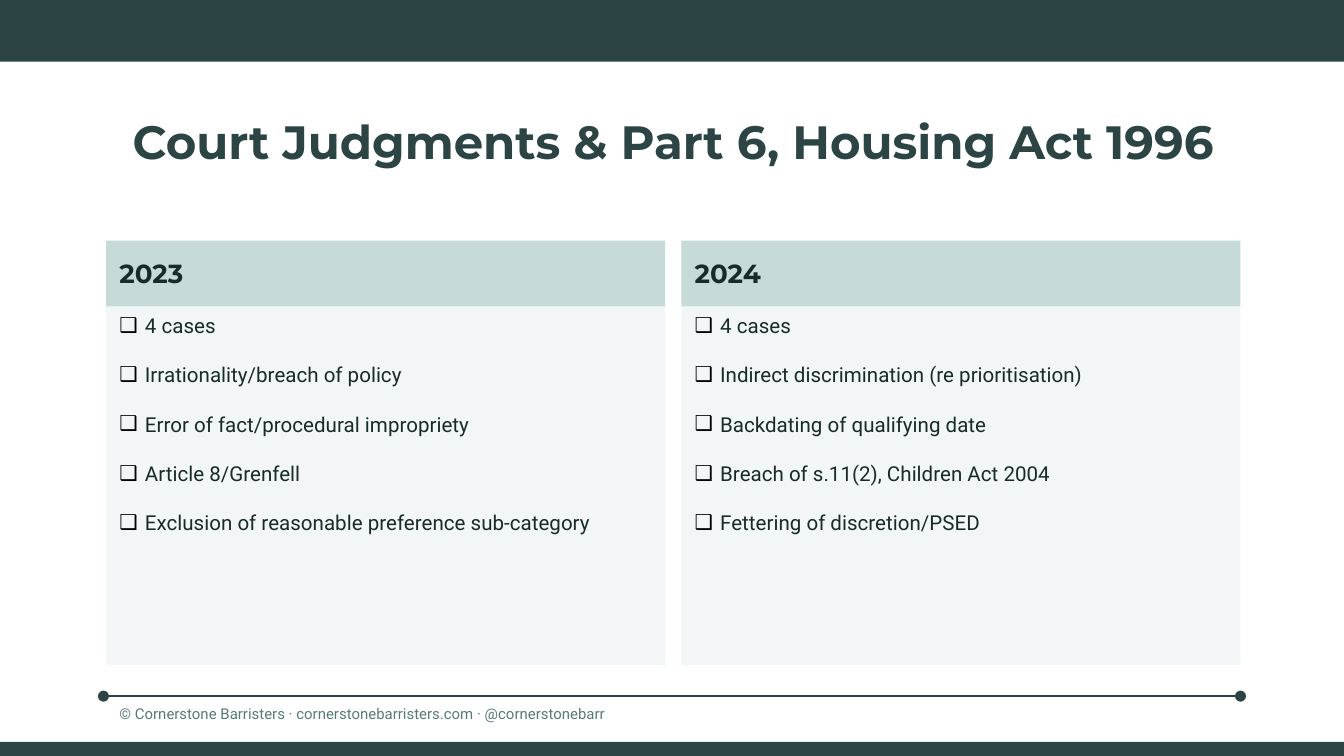
from pptx import Presentation
from pptx.dml.color import RGBColor
from pptx.enum.shapes import MSO_CONNECTOR, MSO_SHAPE
from pptx.enum.text import MSO_ANCHOR, PP_ALIGN
from pptx.oxml import parse_xml
from pptx.oxml.ns import nsdecls
from pptx.util import Inches, Pt

DARK = RGBColor(0x2C, 0x44, 0x44)
INK = RGBColor(0x18, 0x2B, 0x2A)
TEAL = RGBColor(0x56, 0x7A, 0x78)
HEADER = RGBColor(0xC6, 0xDA, 0xDA)
PANEL = RGBColor(0xF2, 0xF6, 0xF6)

TITLE_FMT = {"name": "Montserrat", "size": Pt(25), "bold": True}
HEAD_FMT = {"name": "Montserrat", "size": Pt(14), "bold": True}
BODY_FMT = {"name": "Roboto", "size": Pt(11)}
FOOT_FMT = {"name": "Roboto", "size": Pt(8)}

LEFT, GAP, COL_W = 0.79, 0.12, 4.16
HEAD_TOP, HEAD_H, BODY_H = 1.79, 0.49, 2.67

COLUMNS = {
    "2023": [
        "4 cases",
        "Irrationality/breach of policy",
        "Error of fact/procedural impropriety",
        "Article 8/Grenfell",
        "Exclusion of reasonable preference sub-category",
    ],
    "2024": [
        "4 cases",
        "Indirect discrimination (re prioritisation)",
        "Backdating of qualifying date",
        "Breach of s.11(2), Children Act 2004",
        "Fettering of discretion/PSED",
    ],
}

# 16:9 slide
prs = Presentation()
prs.slide_width, prs.slide_height = Inches(10), Inches(10 * 9 / 16)
s = prs.slides.add_slide(prs.slide_layouts[6])


def add_box(x, y, w, h, fill=None):
    """Add a filled rectangle, or a text box when there is no fill."""
    box = [Inches(v) for v in (x, y, w, h)]
    if fill is None:
        sp = s.shapes.add_textbox(*box)
    else:
        sp = s.shapes.add_shape(MSO_SHAPE.RECTANGLE, *box)
        sp.shadow.inherit = False
        sp.fill.solid()
        sp.fill.fore_color.rgb = fill
        sp.line.fill.background()
    sp.text_frame.word_wrap = True
    sp.text_frame.vertical_anchor = MSO_ANCHOR.TOP
    return sp


def write(p, text, fmt, color, align=PP_ALIGN.LEFT):
    p.alignment = align
    r = p.add_run()
    r.text = text
    for key, value in fmt.items():
        setattr(r.font, key, value)
    r.font.color.rgb = color


# Footer rule with round ends
line = s.shapes.add_connector(
    MSO_CONNECTOR.STRAIGHT, Inches(0.77), Inches(5.18), Inches(9.23), Inches(5.18)
)
line.line.color.rgb = DARK
line.line.width = Pt(0.75)
ln = line.line._get_or_add_ln()
for tag in ("headEnd", "tailEnd"):
    ln.append(parse_xml(f'<a:{tag} {nsdecls("a")} type="oval"/>'))
line._element.spPr.append(parse_xml(f'<a:effectLst {nsdecls("a")}/>'))

# Top and bottom bars
for top, height in ((0, 0.46), (5.52, 0.11)):
    add_box(0, top, 10.14, height, DARK)

# Footer text
tf = add_box(LEFT, 5.14, 4.95, 0.31).text_frame
tf.margin_top, tf.margin_bottom = Inches(0.1), 0
write(
    tf.paragraphs[0],
    "© Cornerstone Barristers · cornerstonebarristers.com · @cornerstonebarr",
    FOOT_FMT,
    TEAL,
)

# Title
tf = add_box(LEFT, 0.79, 2 * COL_W + GAP, 0.58).text_frame
write(
    tf.paragraphs[0],
    "Court Judgments & Part 6, Housing Act 1996",
    TITLE_FMT,
    DARK,
    PP_ALIGN.CENTER,
)

# Year columns: header over a bulleted panel
for col, (year, items) in enumerate(COLUMNS.items()):
    x = LEFT + col * (COL_W + GAP)

    tf = add_box(x, HEAD_TOP + HEAD_H, COL_W, BODY_H, PANEL).text_frame
    for i, item in enumerate(items):
        p = tf.paragraphs[0] if i == 0 else tf.add_paragraph()
        pPr = p._p.get_or_add_pPr()
        pPr.set("marL", str(Inches(0.19)))
        pPr.set("indent", str(-Inches(0.19)))
        for bullet in (
            f'<a:buClr {nsdecls("a")}><a:srgbClr val="000000"/></a:buClr>',
            f'<a:buFont {nsdecls("a")} typeface="Roboto"/>',
            f'<a:buChar {nsdecls("a")} char="❑"/>',
        ):
            pPr.append(parse_xml(bullet))
        if i:
            p.space_before = Pt(13.2)
        write(p, item, BODY_FMT, INK)

    tf = add_box(x, HEAD_TOP, COL_W, HEAD_H, HEADER).text_frame
    tf.vertical_anchor = MSO_ANCHOR.MIDDLE
    write(tf.paragraphs[0], year, HEAD_FMT, INK)

prs.save("out.pptx")
